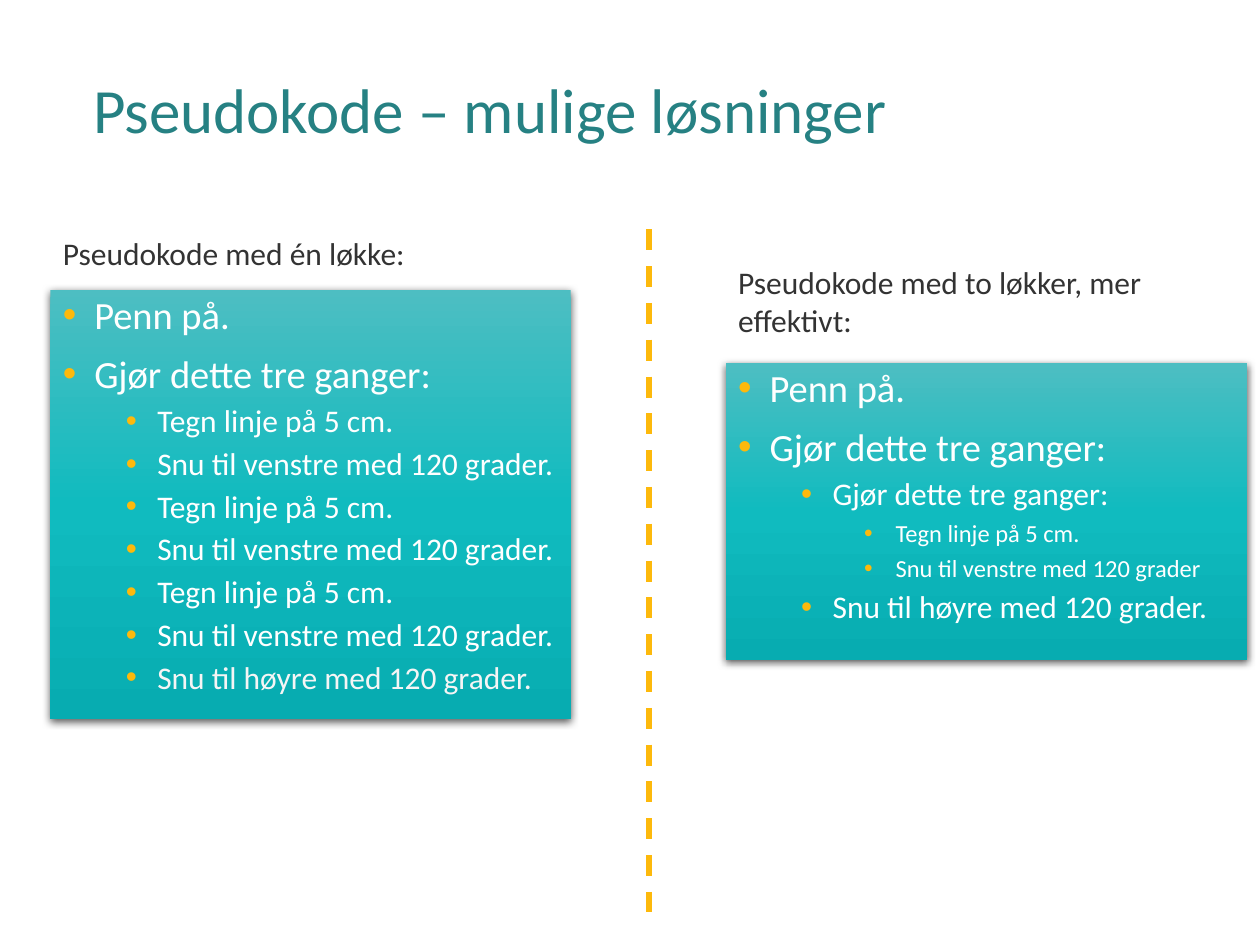
import copy

import pptx
import pptx.dml.color
import pptx.enum.dml
import pptx.enum.shapes
import pptx.enum.text
import pptx.oxml
import pptx.oxml.ns
import pptx.util
from pptx.util import Inches

TEAL, AMBER, GREY = "268183", "FDB90C", "333333"
WHITE, OFF_WHITE = "FFFFFF", "F5F5F5"
NS = pptx.oxml.ns.nsdecls("a")


def rgb(value):
    return pptx.dml.color.RGBColor.from_string(value)


def effect(body):
    return pptx.oxml.parse_xml(body.replace(">", f" {NS}>", 1))


class PseudocodeSlide:
    """Holds the style and the current slide, and adds its elements."""

    font = "Calibri"
    gradient = ((0, "4DBEC2"), (0.5, "10BBBF"), (1, "07ACB1"))
    level_sizes = (22, 18, 14)

    def __init__(self, slide):
        self.slide = slide

    def run(self, paragraph, text, size, color):
        run = paragraph.add_run()
        run.text = text
        run.font.name = self.font
        run.font.size = pptx.util.Pt(size)
        run.font.color.rgb = rgb(color)

    def text(self, left, top, width, height, text, size, color,
             anchor=pptx.enum.text.MSO_ANCHOR.TOP, line_spacing=1.0):
        label = self.slide.shapes.add_textbox(
            Inches(left), Inches(top), Inches(width), Inches(height))
        frame = label.text_frame
        frame.word_wrap = True
        frame.vertical_anchor = anchor
        paragraph = frame.paragraphs[0]
        paragraph.line_spacing = line_spacing
        self.run(paragraph, text, size, color)

    def panel(self, left, top, width, height, steps):
        panel = self.slide.shapes.add_shape(
            pptx.enum.shapes.MSO_SHAPE.RECTANGLE,
            Inches(left), Inches(top), Inches(width), Inches(height))
        panel.line.fill.background()
        self.fill_gradient(panel)
        self.drop_shadow(panel)
        frame = panel.text_frame
        frame.word_wrap = True
        frame.vertical_anchor = pptx.enum.text.MSO_ANCHOR.TOP
        for index, (level, text, color) in enumerate(steps):
            paragraph = frame.add_paragraph() if index else frame.paragraphs[0]
            self.bullet(paragraph, level, first=index == 0)
            self.run(paragraph, text, self.level_sizes[level], color)

    def fill_gradient(self, panel):
        panel.fill.gradient()
        panel.fill.gradient_angle = 270
        stops = panel._element.spPr.find(".//" + pptx.oxml.ns.qn("a:gsLst"))
        stops.append(copy.deepcopy(stops[-1]))
        for stop, (position, color) in zip(panel.fill.gradient_stops, self.gradient):
            stop.position = position
            stop.color.rgb = rgb(color)

    def drop_shadow(self, panel):
        panel.shadow.inherit = False
        effects = panel._element.spPr.find(pptx.oxml.ns.qn("a:effectLst"))
        effects.append(effect(
            '<a:outerShdw blurRad="57150" dist="19050" dir="5400000" algn="ctr" rotWithShape="0">'
            '<a:srgbClr val="000000"><a:alpha val="63000"/></a:srgbClr></a:outerShdw>'))

    def bullet(self, paragraph, level, first):
        paragraph.level = level
        paragraph.alignment = pptx.enum.text.PP_ALIGN.LEFT
        paragraph.line_spacing = 0.9
        paragraph.space_before = pptx.util.Pt(0 if first else 5 if level else 10)
        properties = paragraph._p.get_or_add_pPr()
        properties.set("marL", str(Inches(0.25 + 0.5 * level)))
        properties.set("indent", str(Inches(-0.25)))
        for body in (f'<a:buClr><a:srgbClr val="{AMBER}"/></a:buClr>',
                     '<a:buFont typeface="Arial"></a:buFont>',
                     '<a:buChar char="•"></a:buChar>'):
            properties.append(effect(body))

    def divider(self, x, top, bottom):
        divider = self.slide.shapes.add_connector(
            pptx.enum.shapes.MSO_CONNECTOR.STRAIGHT,
            Inches(x), Inches(top), Inches(x), Inches(bottom))
        divider.line.color.rgb = rgb(AMBER)
        divider.line.width = pptx.util.Pt(3)
        divider.line.dash_style = pptx.enum.dml.MSO_LINE.DASH
        divider._element.spPr.append(effect("<a:effectLst></a:effectLst>"))


def main():
    presentation = pptx.Presentation()
    presentation.slide_width = Inches(10)
    presentation.slide_height = Inches(7.5)
    page = PseudocodeSlide(presentation.slides.add_slide(presentation.slide_layouts[6]))

    draw = "Tegn linje på 5 cm."
    turn_left = "Snu til venstre med 120 grader"
    turn_right = "Snu til høyre med 120 grader."
    repeat = "Gjør dette tre ganger:"
    opening = [(0, "Penn på.", WHITE), (0, repeat, WHITE)]
    one_loop = (opening + [(1, draw, WHITE), (1, turn_left + ".", WHITE)] * 3
                + [(1, turn_right, OFF_WHITE)])
    two_loops = opening + [(1, repeat, WHITE), (2, draw, WHITE),
                           (2, turn_left, WHITE), (1, turn_right, WHITE)]

    page.text(0.64, 0.17, 8.29, 1.45, "Pseudokode – mulige løsninger", 36, TEAL,
              pptx.enum.text.MSO_ANCHOR.MIDDLE, 0.9)
    page.panel(5.76, 2.88, 4.14, 2.36, two_loops)
    page.panel(0.4, 2.3, 4.13, 3.41, one_loop)
    page.text(0.4, 1.81, 3.72, 0.4, "Pseudokode med én løkke:", 18, GREY)
    page.text(5.76, 2.04, 3.72, 0.71, "Pseudokode med to løkker, mer effektivt:", 18, GREY)
    page.divider(5.15, 1.82, 7.24)
    presentation.save("out.pptx")


if __name__ == "__main__":
    main()
